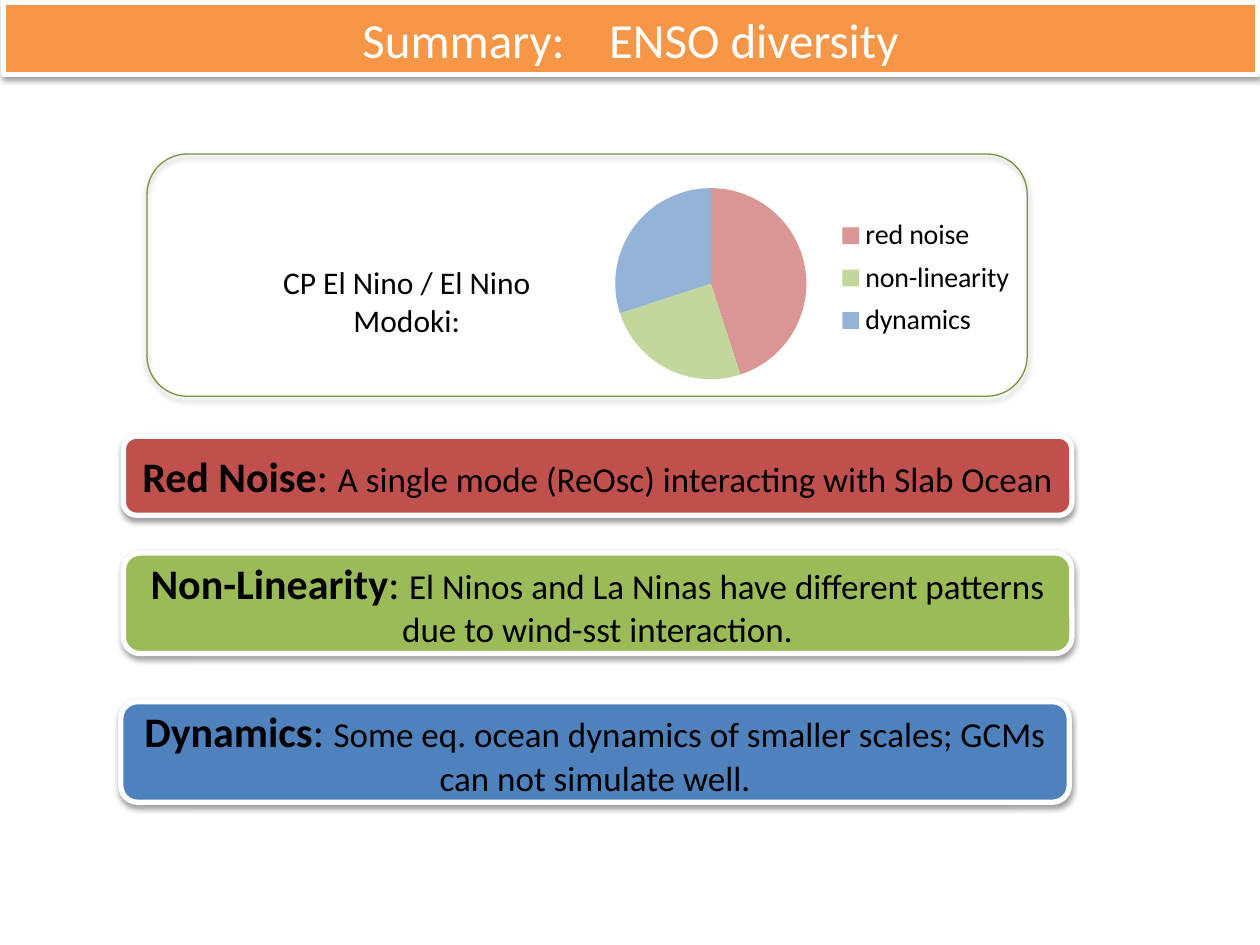
from lxml import etree
from pptx import Presentation
from pptx.chart import data
from pptx.dml.color import RGBColor
from pptx.enum import chart as charts, shapes, text
from pptx.oxml import ns
from pptx.util import Pt

COLORS = {
    "black": "000000", "white": "FFFFFF", "orange": "F79646",
    "red": "C0504D", "green": "9BBB59", "blue": "4F81BD", "outline": "77933C",
    "pale red": "D99694", "pale green": "C3D69B", "pale blue": "95B3D7",
}


def style_shape(shape, fill, line, width, distance, opacity):
    """Set fill, outline and a soft shadow that falls straight down."""
    if fill:
        shape.fill.solid()
        shape.fill.fore_color.rgb = RGBColor.from_string(COLORS[fill])
    else:
        shape.fill.background()
    shape.line.color.rgb = RGBColor.from_string(COLORS[line])
    shape.line.width = Pt(width)
    shape.shadow.inherit = False
    effects = shape.element.spPr.find(ns.qn("a:effectLst"))
    shadow = etree.SubElement(effects, ns.qn("a:outerShdw"), blurRad=str(Pt(3.1)),
                              dist=str(Pt(distance)), dir="5400000", rotWithShape="0")
    color = etree.SubElement(shadow, ns.qn("a:srgbClr"), val=COLORS["black"])
    etree.SubElement(color, ns.qn("a:alpha"), val=str(opacity * 1000))


def format_font(font, size, color="black", bold=False):
    font.name = "Calibri"
    font.size = Pt(size)
    font.bold = bold
    font.color.rgb = RGBColor.from_string(COLORS[color])


deck = Presentation()
deck.slide_width, deck.slide_height = Pt(720), Pt(540)
page = deck.slides.add_slide(deck.slide_layouts[5])

# Pie chart of the contributions
shares = data.CategoryChartData()
shares.categories = ["red noise", "non-linearity", "dynamics"]
shares.add_series("Series 1", (45, 25, 30))
pie = page.shapes.add_chart(charts.XL_CHART_TYPE.PIE, Pt(327), Pt(97),
                            Pt(273), Pt(129), shares).chart
format_font(pie.font, 18)
pie.has_title = False
pie.has_legend = True
pie.legend.position = charts.XL_LEGEND_POSITION.RIGHT
pie.legend.include_in_layout = False
format_font(pie.legend.font, 16)
pie.plots[0].vary_by_categories = True
for index, name in enumerate(["pale red", "pale green", "pale blue"]):
    wedge = pie.plots[0].series[0].points[index].format
    wedge.fill.solid()
    wedge.fill.fore_color.rgb = RGBColor.from_string(COLORS[name])

# Fixed places for pie and legend, as fractions of the chart: x, y, w, h
chart_space = pie.element
plot_area = chart_space.find(".//" + ns.qn("c:plotArea"))
legend = chart_space.find(".//" + ns.qn("c:legend"))
for part, position, target, place in [
    (plot_area, 0, "inner", (0.09, 0.08, 0.4, 0.85)),
    (legend, 1, None, (0.54, 0.18, 0.4, 0.6)),
]:
    for old in part.findall(ns.qn("c:layout")):
        part.remove(old)
    layout = etree.Element(ns.qn("c:layout"))
    part.insert(position, layout)
    manual = etree.SubElement(layout, ns.qn("c:manualLayout"))
    if target:
        etree.SubElement(manual, ns.qn("c:layoutTarget"), val=target)
    for mode in ("xMode", "yMode"):
        etree.SubElement(manual, ns.qn("c:" + mode), val="edge")
    for side, fraction in zip("xywh", place):
        etree.SubElement(manual, ns.qn("c:" + side), val=str(fraction))

# Chart label
label = page.shapes.add_textbox(Pt(134), Pt(147), Pt(197), Pt(29)).text_frame
label.word_wrap = True
para = label.paragraphs[0]
para.text = "CP El Nino / El Nino Modoki:"
para.alignment = text.PP_ALIGN.CENTER
format_font(para.runs[0].font, 18)

# Outline around label and chart
panel = page.shapes.add_shape(shapes.MSO_SHAPE.ROUNDED_RECTANGLE,
                              Pt(84), Pt(88), Pt(503), Pt(138.5))
style_shape(panel, None, "outline", 0.75, 1.8, 35)

# Explanation of each contribution
bars = [
    ("Red Noise", "A single mode (ReOsc) interacting with Slab Ocean",
     "red", 70.5, 249.25, 45.25),
    ("Non-Linearity",
     "El Ninos and La Ninas have different patterns due to wind-sst interaction.",
     "green", 70.5, 316, 57.5),
    ("Dynamics",
     "Some eq. ocean dynamics of smaller scales; GCMs can not simulate well.",
     "blue", 69, 401, 57.5),
]
for term, meaning, fill, left, top, height in bars:
    bar = page.shapes.add_shape(shapes.MSO_SHAPE.ROUNDED_RECTANGLE,
                                Pt(left), Pt(top), Pt(542), Pt(height))
    style_shape(bar, fill, "white", 3, 1.6, 38)
    bar.text_frame.vertical_anchor = text.MSO_ANCHOR.MIDDLE
    para = bar.text_frame.paragraphs[0]
    para.alignment = text.PP_ALIGN.CENTER
    for words, size, bold in [(term, 24, True), (": ", 24, False), (meaning, 20, False)]:
        span = para.add_run()
        span.text = words
        format_font(span.font, size, bold=bold)

# Title banner, in front of everything else
title = page.shapes.title
title.left, title.top, title.width, title.height = Pt(2), Pt(1.5), Pt(716.5), Pt(41)
style_shape(title, "orange", "white", 3, 1.6, 38)
title.text_frame.auto_size = text.MSO_AUTO_SIZE.NONE
title.text_frame.vertical_anchor = text.MSO_ANCHOR.MIDDLE
para = title.text_frame.paragraphs[0]
para.alignment = text.PP_ALIGN.CENTER
for words in ("Summary:", " ", "ENSO diversity"):
    span = para.add_run()
    span.text = words
    format_font(span.font, 28, "white")
para.runs[1].font._element.set("spc", "1900")  # wide gap after the colon
page.shapes._spTree.append(title.element)

deck.save("out.pptx")
